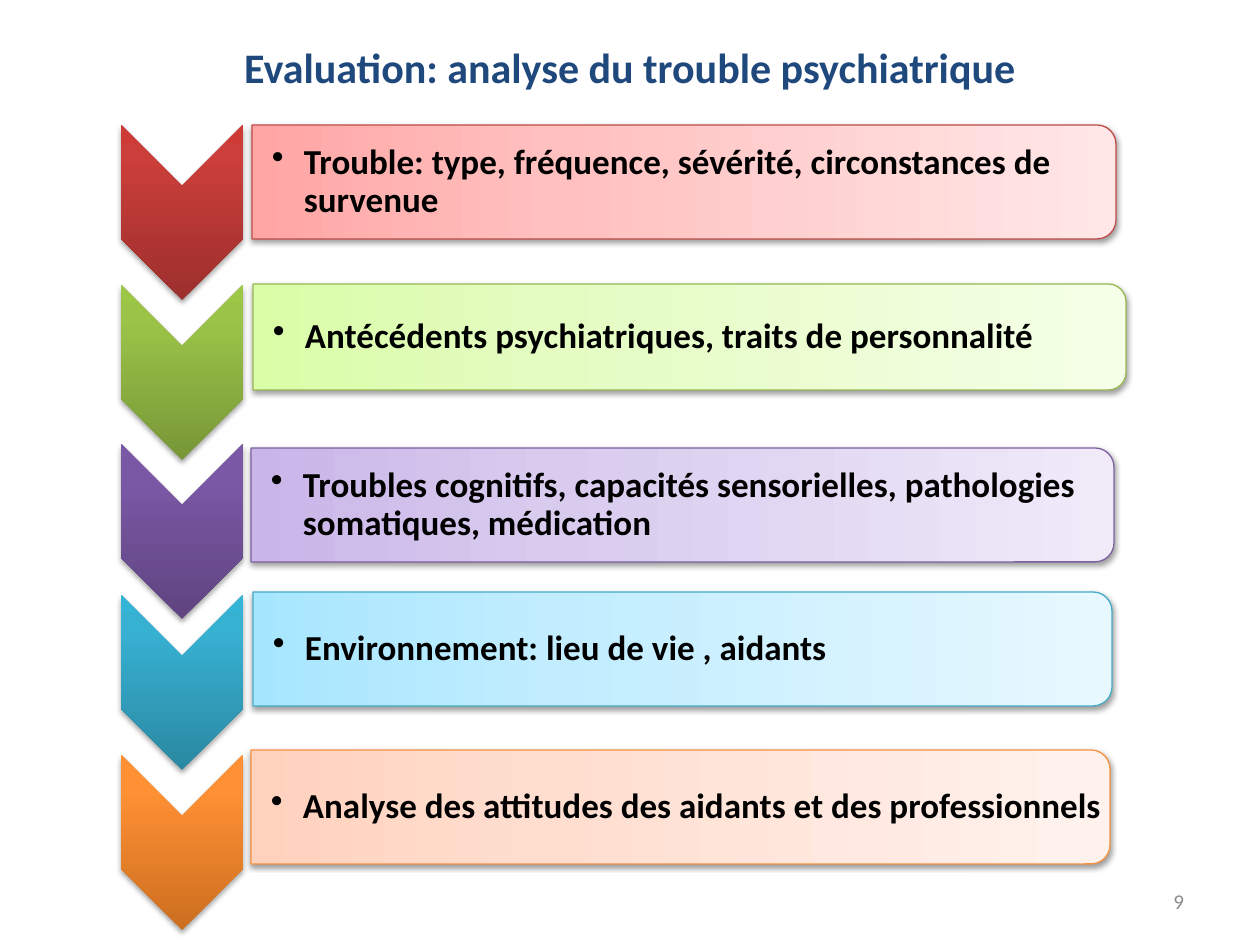
from lxml import etree
from pptx import Presentation
from pptx.dml.color import RGBColor
from pptx.enum.shapes import MSO_SHAPE
from pptx.enum.text import MSO_ANCHOR, PP_ALIGN
from pptx.oxml.ns import qn
from pptx.util import Emu, Pt

CHEVRON = MSO_SHAPE.CHEVRON
BAR = MSO_SHAPE.ROUND_2_SAME_RECTANGLE
MIDDLE = MSO_ANCHOR.MIDDLE
LEFT, CENTER, RIGHT = PP_ALIGN.LEFT, PP_ALIGN.CENTER, PP_ALIGN.RIGHT

# Content
TITLE = "Evaluation: analyse du trouble psychiatrique"
NUMBER = "9"
# text, theme hue, chevron top, bar box (left, top, width, height)
ROWS = [
    ("Trouble: type, fréquence, sévérité, circonstances de survenue",
     "red", 125, (252, 125, 864, 114)),
    ("Antécédents psychiatriques, traits de personnalité",
     "green", 285, (253, 284, 873, 106)),
    ("Troubles cognitifs, capacités sensorielles, pathologies somatiques, médication",
     "purple", 444, (251, 448, 863, 114)),
    ("Environnement: lieu de vie , aidants",
     "blue", 595, (253, 592, 859, 114)),
    ("Analyse des attitudes des aidants et des professionnels",
     "orange", 755, (251, 750, 859, 114)),
]

# Each hue: chevron stops, bar stops, bar line
THEME = {
    "font": "Calibri",
    "title": (24, "1F497D", True),
    "body": (20, "000000", True),
    "number": (12, "8C8C8C", False),
    "red": (("9C2F2D", "CB3E3A", "CE3B37"), ("FFA6A5", "FFC0BF", "FFE7E7"), "BF4C48"),
    "green": (("779737", "9BC348", "9DC746"), ("DAFDA7", "E4FCC2", "F5FFE7"), "98B955"),
    "purple": (("5F4480", "7B58A6", "7C57A8"), ("C9B5E8", "D8CBEE", "F0EAF9"), "7D60A0"),
    "blue": (("2A88A2", "37B1D2", "34B4D6"), ("A7E6FF", "C1EDFF", "E7F8FF"), "46AAC5"),
    "orange": (("CC6E20", "FF9034", "FF9136"), ("FFD2BD", "FFDED0", "FFF2ED"), "F69240"),
}
ARROW = (121, 122, 175)  # left, width, height


def px(n):
    return Emu(round(n * 914400 / 126))


def add(parent, tag, **attrs):
    node = etree.SubElement(parent, qn(tag))
    for key, val in attrs.items():
        node.set(key, str(val))
    return node


def tint(node, color, alpha=None):
    clr = add(node, "a:srgbClr", val=color)
    if alpha:
        add(clr, "a:alpha", val=alpha * 1000)


def turned(slide, kind, box, stops, mid, angle, shade):
    """Add a shape turned a quarter right that fills box once turned."""
    x, y, w, h = box
    shape = slide.shapes.add_shape(
        kind, px(x + (w - h) / 2), px(y + (h - w) / 2), px(h), px(w))
    shape.rotation = 90
    shape.fill.gradient()
    shape.fill.gradient_angle = angle
    props = shape._element.spPr
    ramp = props.find(qn("a:gradFill")).find(qn("a:gsLst"))
    for old in list(ramp):
        ramp.remove(old)
    for at, color in zip((0, mid, 100), stops):
        tint(add(ramp, "a:gs", pos=at * 1000), color)
    # Soft shadow straight below
    dist, alpha = shade
    shape.shadow.inherit = False
    glow = add(props.find(qn("a:effectLst")), "a:outerShdw", blurRad=Pt(3.1),
               dist=Pt(dist), dir=5400000, rotWithShape=0)
    tint(glow, "000000", alpha)
    return shape


def write(slide, text, box, style, align, insets=(13, 6, 13, 6)):
    frame = slide.shapes.add_textbox(*map(px, box)).text_frame
    frame.word_wrap = True
    frame.vertical_anchor = MIDDLE
    (frame.margin_left, frame.margin_top,
     frame.margin_right, frame.margin_bottom) = map(px, insets)
    para = frame.paragraphs[0]
    para.text = text
    para.alignment = align
    size, color, bold = THEME[style]
    font = para.font
    font.name, font.size, font.bold = THEME["font"], Pt(size), bold
    font.color.rgb = RGBColor.from_string(color)
    return para


def bullet(para):
    para.line_spacing = 0.9
    props = para._p.get_or_add_pPr()
    props.set("marL", str(px(32)))
    props.set("indent", str(px(-32)))
    mark = etree.Element(qn("a:buChar"), char="•")
    props.find(qn("a:lnSpc")).addnext(mark)


def main():
    deck = Presentation()
    deck.slide_width, deck.slide_height = px(1260), px(945)
    slide = deck.slides.add_slide(deck.slide_layouts[6])

    write(slide, TITLE, (63, 0, 1134, 134), "title", CENTER)

    # Chevron, bar and text of each row
    left, wide, high = ARROW
    for text, hue, top, box in ROWS:
        dark, pale, edge = THEME[hue]
        arrow = turned(slide, CHEVRON, (left, top, wide, high), dark, 80, 180, (1.8, 35))
        arrow.line.fill.background()
        bar = turned(slide, BAR, box, pale, 35, 90, (1.6, 38))
        bar.line.color.rgb = RGBColor.from_string(edge)
        bar.line.width = Pt(0.75)
        x, y, w, h = box
        bullet(write(slide, text, (x, y + 6, w - 6, h - 11), "body", LEFT, (20, 1, 1, 1)))

    write(slide, NUMBER, (903, 876, 294, 50), "number", RIGHT)
    deck.save("out.pptx")


if __name__ == "__main__":
    main()
